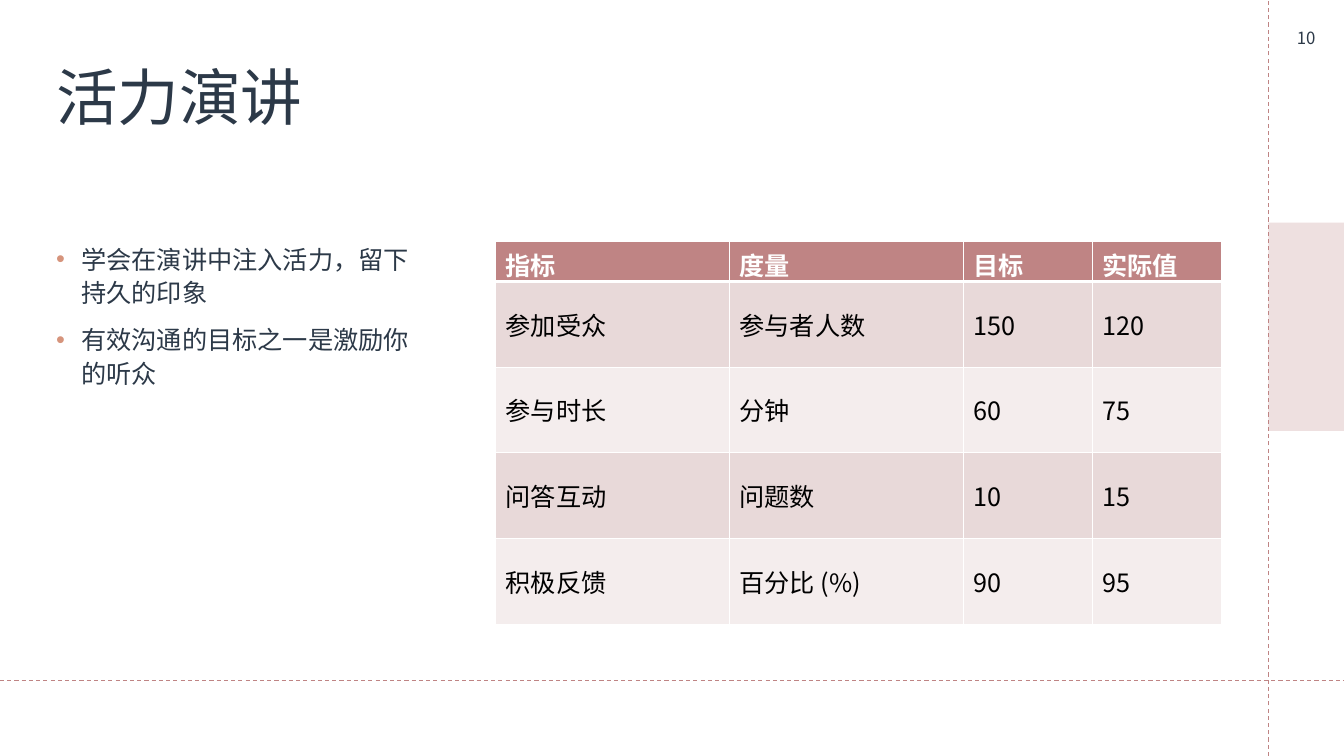
from lxml import etree
from pptx import Presentation
from pptx.dml.color import RGBColor
from pptx.enum.dml import MSO_LINE
from pptx.enum.shapes import MSO_CONNECTOR, MSO_SHAPE
from pptx.enum.text import MSO_ANCHOR, PP_ALIGN
from pptx.oxml import parse_xml
from pptx.oxml.ns import nsdecls, qn
from pptx.util import Inches, Pt

DASH = MSO_LINE.DASH
STRAIGHT = MSO_CONNECTOR.STRAIGHT
RECT = MSO_SHAPE.RECTANGLE
TOP, MIDDLE = MSO_ANCHOR.TOP, MSO_ANCHOR.MIDDLE
CENTER = PP_ALIGN.CENTER

FONT = "Noto Sans CJK SC"
NAVY = RGBColor(0x2C, 0x39, 0x48)
ROSE = RGBColor(0xBF, 0x84, 0x84)
BAND_DARK = RGBColor(0xE8, 0xD9, 0xD9)
BAND_LIGHT = RGBColor(0xF4, 0xED, 0xED)
WHITE = RGBColor(0xFF, 0xFF, 0xFF)
BLACK = RGBColor(0, 0, 0)

COLS, ROWS = 160, 90
U = Inches(7.5) // ROWS
RAIL = 151


def add_run(p, text, size, color, bold=False):
    r = p.add_run()
    r.text = text
    r.font.size = Pt(size)
    r.font.bold = bold
    r.font.color.rgb = color
    r.font.name = FONT
    etree.SubElement(r.font._element, qn("a:ea"), typeface=FONT)


def add_text(s, x, y, w, h, anchor):
    tf = s.shapes.add_textbox(int(x * U), int(y * U), int(w * U), int(h * U)).text_frame
    tf.word_wrap = True
    tf.vertical_anchor = anchor
    return tf


prs = Presentation()
prs.slide_width = COLS * U
prs.slide_height = ROWS * U
s = prs.slides.add_slide(prs.slide_layouts[6])

for x1, y1, x2, y2 in [(RAIL, ROWS, RAIL, 0), (0, 81, COLS, 81)]:
    line = s.shapes.add_connector(STRAIGHT, x1 * U, y1 * U, x2 * U, y2 * U)
    line.line.color.rgb = ROSE
    line.line.width = Pt(0.75)
    line.line.dash_style = DASH
    etree.SubElement(line._element.spPr, qn("a:effectLst"))

sp = s.shapes.add_shape(RECT, RAIL * U, int(26.5 * U), 9 * U, int(24.8 * U))
sp.shadow.inherit = False
sp.line.fill.background()
sp.fill.solid()
sp.fill.fore_color.rgb = ROSE
rose_fill = sp._element.spPr.find(qn("a:solidFill"))
etree.SubElement(rose_fill[0], qn("a:alpha"), val="25000")

tf = add_text(s, 5.5, 4.8, 145.2, 17.4, MIDDLE)
p = tf.paragraphs[0]
p.line_spacing = Pt(28)
p.space_before = Pt(10)
add_run(p, "活力演讲", 44, NAVY)

tf = add_text(s, 5.5, 28.7, 46.8, 46.2, TOP)
tf.margin_top = tf.margin_bottom = 0
points = ["学会在演讲中注入活力，留下持久的印象", "有效沟通的目标之一是激励你的听众"]
for i, point in enumerate(points):
    p = tf.add_paragraph() if i else tf.paragraphs[0]
    p.line_spacing = 1.1
    p.space_before = Pt(10)
    pPr = p._p.get_or_add_pPr()
    pPr.set("marL", str(3 * U))
    pPr.set("indent", str(-3 * U))
    pPr.append(parse_xml(f'<a:buClr {nsdecls("a")}><a:srgbClr val="D6947C"/></a:buClr>'))
    pPr.append(parse_xml(f'<a:buFont {nsdecls("a")} typeface="Arial"/>'))
    pPr.append(parse_xml(f'<a:buChar {nsdecls("a")} char="•"/>'))
    add_run(p, point, 18, NAVY)

metrics = [
    ["指标", "度量", "目标", "实际值"],
    ["参加受众", "参与者人数", "150", "120"],
    ["参与时长", "分钟", "60", "75"],
    ["问答互动", "问题数", "10", "15"],
    ["积极反馈", "百分比 (%)", "90", "95"],
]
col_widths = [27.84, 27.84, 15.36, 15.36]
row_heights = [4.68] + [10.2] * 4
table = s.shapes.add_table(
    len(metrics), len(col_widths), 59 * U, int(28.7 * U),
    int(sum(col_widths) * U), int(sum(row_heights) * U)).table
for column, width in zip(table.columns, col_widths):
    column.width = int(width * U)
for i, values in enumerate(metrics):
    table.rows[i].height = int(row_heights[i] * U)
    header = i == 0
    edges = {"lnL": 1, "lnR": 1, "lnT": 3 if i == 1 else 1, "lnB": 3 if header else 1}
    for j, value in enumerate(values):
        cell = table.cell(i, j)
        cell.vertical_anchor = MIDDLE
        tcPr = cell._tc.get_or_add_tcPr()
        for edge, width in edges.items():
            tcPr.append(parse_xml(
                f'<a:{edge} {nsdecls("a")} w="{Pt(width)}"><a:solidFill>'
                f'<a:srgbClr val="{WHITE}"/></a:solidFill></a:{edge}>'))
        cell.fill.solid()
        cell.fill.fore_color.rgb = ROSE if header else BAND_DARK if i % 2 else BAND_LIGHT
        add_run(cell.text_frame.paragraphs[0], value, 18, WHITE if header else BLACK, header)

tf = add_text(s, RAIL, 0, 9, 9, MIDDLE)
p = tf.paragraphs[0]
p.alignment = CENTER
add_run(p, "10", 12, NAVY)

prs.save("out.pptx")
